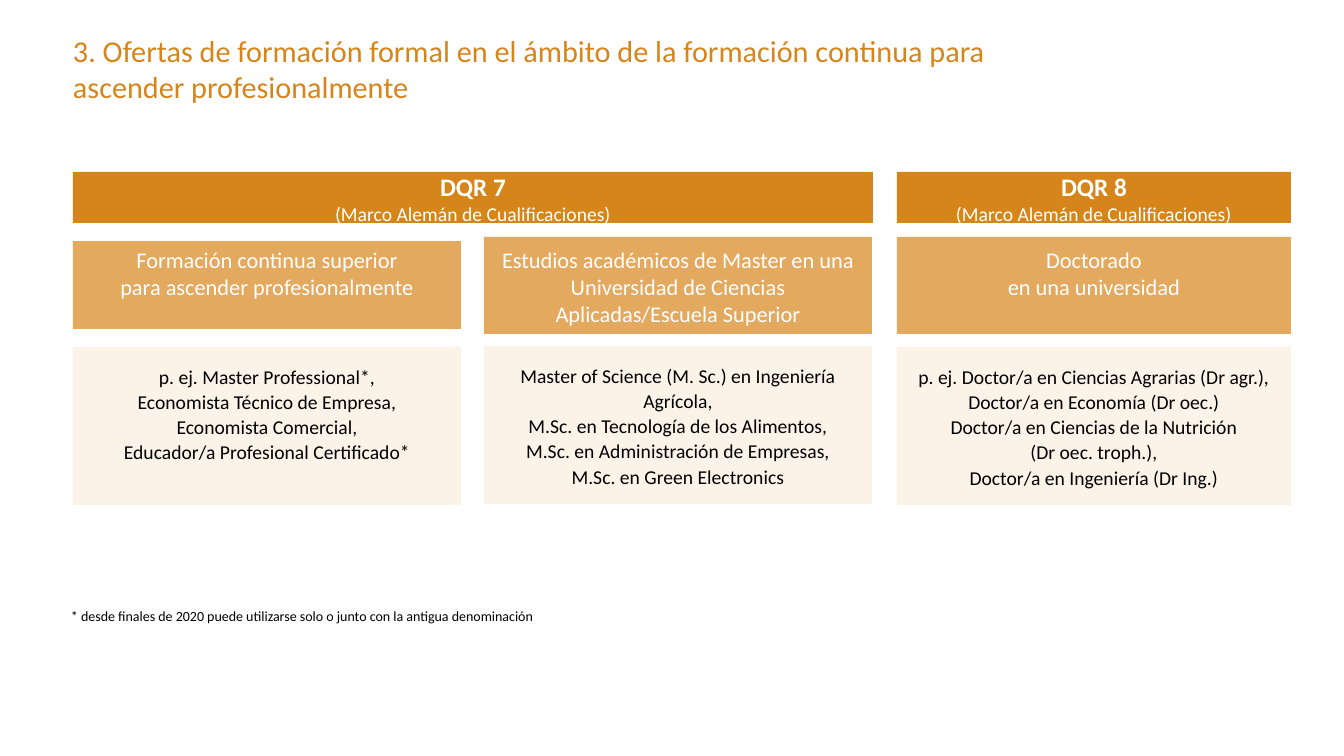
"""Build the slide on formal continuing training offers at DQR levels 7 and 8."""
from pptx import Presentation
from pptx.dml.color import RGBColor
from pptx.enum.shapes import MSO_SHAPE
from pptx.enum.text import MSO_ANCHOR, MSO_AUTO_SIZE, PP_ALIGN
from pptx.util import Emu, Pt

ORANGE = RGBColor(0xD6, 0x85, 0x1B)
SAND = RGBColor(0xE2, 0xA9, 0x5F)
CREAM = RGBColor(0xFB, 0xF3, 0xE8)
WHITE = RGBColor(0xFF, 0xFF, 0xFF)
BLACK = RGBColor(0x00, 0x00, 0x00)
FONT = "Calibri"
PIXELS_PER_INCH = 100.8

HEADERS = [(73, 800, "DQR 7"), (897, 394, "DQR 8")]
FRAMEWORK = "(Marco Alemán de Cualificaciones)"
OFFER_TEXT_TOP = 246
OFFERS = [
    (73, 388, 241, 88, 347,
     ["Formación continua superior", "para ascender profesionalmente"],
     ["p. ej. Master Professional*,", "Economista Técnico de Empresa,",
      "Economista Comercial,", "Educador/a Profesional Certificado*"]),
    (484, 388, 237, 97, 346,
     ["Estudios académicos de Master en una Universidad de Ciencias "
      "Aplicadas/Escuela Superior"],
     ["Master of Science (M. Sc.) en Ingeniería Agrícola,",
      "M.Sc. en Tecnología de los Alimentos,",
      "M.Sc. en Administración de Empresas,", "M.Sc. en Green Electronics"]),
    (897, 394, 237, 97, 347,
     ["Doctorado", "en una universidad"],
     ["p. ej. Doctor/a en Ciencias Agrarias (Dr agr.),",
      "Doctor/a en Economía (Dr oec.)", "Doctor/a en Ciencias de la Nutrición",
      "(Dr oec. troph.),", "Doctor/a en Ingeniería (Dr Ing.)"]),
]


def px(length):
    return Emu(round(length * 914400 / PIXELS_PER_INCH))


class SlideBuilder:
    def __init__(self, deck):
        self.page = deck.slides.add_slide(deck.slide_layouts[5])

    def fill_text(self, box, lines, color, insets=(0, 0, 0, 0),
                  align=PP_ALIGN.LEFT, anchor=MSO_ANCHOR.TOP, spacing=None):
        frame = box.text_frame
        frame.word_wrap = True
        frame.auto_size = MSO_AUTO_SIZE.NONE
        frame.vertical_anchor = anchor
        (frame.margin_left, frame.margin_top,
         frame.margin_right, frame.margin_bottom) = map(px, insets)
        para = frame.paragraphs[0]
        para.alignment = align
        if spacing:
            para.line_spacing = Pt(spacing)
        for index, (text, size, bold) in enumerate(lines):
            if index:
                para.add_line_break()
            span = para.add_run()
            span.text = text
            span.font.name = FONT
            span.font.size = Pt(size)
            span.font.bold = bold
            span.font.color.rgb = color

    def title(self, left, top, width, height, text):
        box = self.page.shapes.title
        box.left, box.top, box.width, box.height = map(
            px, (left, top, width, height))
        self.fill_text(box, [(text, 21.6, False)], ORANGE)

    def panel(self, left, top, width, height, fill, lines, color, insets,
              **layout):
        box = self.page.shapes.add_shape(
            MSO_SHAPE.RECTANGLE, *map(px, (left, top, width, height)))
        box.shadow.inherit = False
        box.fill.solid()
        box.fill.fore_color.rgb = fill
        box.line.fill.background()
        self.fill_text(box, lines, color, insets, PP_ALIGN.CENTER, **layout)

    def note(self, left, top, width, height, text):
        box = self.page.shapes.add_textbox(
            *map(px, (left, top, width, height)))
        self.fill_text(box, [(text, 10, False)], BLACK, (0, 5, 0, 5))


def main():
    deck = Presentation()
    deck.slide_width, deck.slide_height = px(1344), px(756)
    builder = SlideBuilder(deck)
    builder.title(73, 32, 992, 49,
                  "3. Ofertas de formación formal en el ámbito de la formación "
                  "continua para ascender profesionalmente")
    for left, width, level in HEADERS:
        builder.panel(left, 172, width, 51, ORANGE,
                      [(level, 18, True), (FRAMEWORK, 14, False)], WHITE,
                      (4, 8, 4, 0), anchor=MSO_ANCHOR.MIDDLE, spacing=17)
    for left, width, top, height, body_top, offer, examples in OFFERS:
        builder.panel(left, top, width, height, SAND,
                      [(text, 16, False) for text in offer], WHITE,
                      (4, OFFER_TEXT_TOP - top, 4, 0))
        builder.panel(left, body_top, width, 158, CREAM,
                      [(text, 14, False) for text in examples], BLACK,
                      (8, 16, 8, 16), spacing=18)
    builder.note(71, 603, 807, 27,
                 "* desde finales de 2020 puede utilizarse solo o junto con la "
                 "antigua denominación")
    deck.save("out.pptx")


if __name__ == "__main__":
    main()
